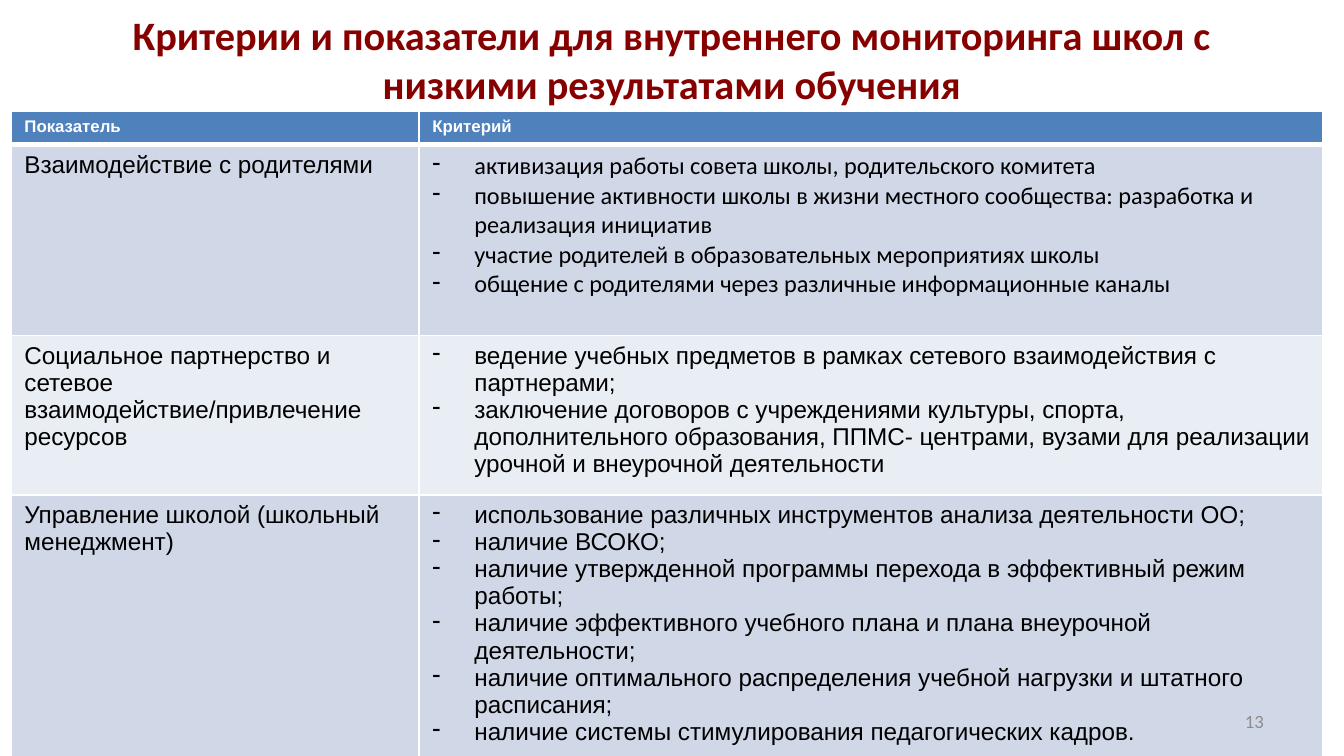
import pptx
import pptx.util
import pptx.dml.color
import pptx.enum.text
import pptx.oxml
import pptx.oxml.ns
import lxml.etree

PX = 914400 / 134.4
INK = {"title": "860000", "head": "4F81BD", "dark": "D0D8E8", "pale": "E9EDF4",
       "white": "FFFFFF", "text": "000000", "page": "8C8C8C"}
ALIGN = pptx.enum.text.PP_ALIGN
ROWS = [
    ("Взаимодействие с родителями", "Calibri", 191, [
        "активизация работы совета школы, родительского комитета",
        "повышение активности школы в жизни местного сообщества: разработка и реализация инициатив",
        "участие родителей в образовательных мероприятиях школы",
        "общение с родителями через различные информационные каналы"]),
    ("Социальное партнерство и сетевое взаимодействие/привлечение ресурсов", "Arial", 149, [
        "ведение учебных предметов в рамках сетевого взаимодействия с партнерами;",
        "заключение договоров с учреждениями культуры, спорта, дополнительного образования, "
        "ППМС- центрами, вузами для реализации урочной и внеурочной деятельности"]),
    ("Управление школой (школьный менеджмент)", "Arial", 257, [
        "использование различных инструментов анализа деятельности ОО;",
        "наличие ВСОКО;",
        "наличие утвержденной программы перехода в эффективный режим работы;",
        "наличие эффективного учебного плана и плана внеурочной деятельности;",
        "наличие оптимального распределения учебной нагрузки и штатного расписания;",
        "наличие системы стимулирования педагогических кадров."]),
]


def emu(px):
    """Turn px into EMU."""
    return pptx.util.Emu(round(px * PX))


def rgb(key):
    """Look up a colour by its key."""
    return pptx.dml.color.RGBColor.from_string(INK[key])


def style(frame, size, face, ink, bold=False):
    """Format every run of a text frame."""
    for para in frame.paragraphs:
        for run in para.runs:
            run.font.size = pptx.util.Pt(size)
            run.font.name = face
            run.font.bold = bold
            run.font.color.rgb = rgb(ink)


def label(slide, box, text, align, size, ink, bold=False):
    """Place one line of Calibri text, centred vertically, in the box."""
    shape = slide.shapes.add_textbox(*map(emu, box))
    frame = shape.text_frame
    frame.word_wrap = True
    frame.vertical_anchor = pptx.enum.text.MSO_ANCHOR.MIDDLE
    frame.margin_top = frame.margin_bottom = emu(6)
    frame.text = text
    frame.paragraphs[0].alignment = align
    style(frame, size, "Calibri", ink, bold)


def dashes(frame):
    """Give each paragraph a hanging dash."""
    for para in frame.paragraphs:
        props = para._p.get_or_add_pPr()
        props.set("marL", str(emu(42)))
        props.set("indent", str(-emu(42)))
        mark = lxml.etree.SubElement(props, pptx.oxml.ns.qn("a:buChar"))
        mark.set("char", "-")


def edges(cell, low, high):
    """Draw white cell borders with the given top and bottom widths."""
    props = cell._tc.get_or_add_tcPr()
    widths = {"lnL": 1, "lnR": 1, "lnT": high, "lnB": low}
    for spot, (tag, width) in enumerate(widths.items()):
        line = pptx.oxml.parse_xml(
            f'<a:{tag} {pptx.oxml.ns.nsdecls("a")} w="{pptx.util.Pt(width)}">'
            f'<a:solidFill><a:srgbClr val="{INK["white"]}"/></a:solidFill></a:{tag}>')
        props.insert(spot, line)


def paint(cell, text, fill, size, face, ink, bold=False, low=1, high=1):
    """Fill one cell with text, colour and borders."""
    cell.text_frame.text = text
    style(cell.text_frame, size, face, ink, bold)
    cell.fill.solid()
    cell.fill.fore_color.rgb = rgb(fill)
    edges(cell, low, high)


def grid(slide, box):
    """Build the table of indicators and criteria in the box."""
    left, top, width, height = box
    table = slide.shapes.add_table(len(ROWS) + 1, 2, *map(emu, box)).table
    first = 408
    table.columns[0].width = emu(first)
    table.columns[1].width = emu(width - first)
    table.rows[0].height = emu(height - sum(row[2] for row in ROWS))
    for col, text in enumerate(("Показатель", "Критерий")):
        paint(table.cell(0, col), text, "head", 9, "Arial", "white", True, low=3)
    for num, (name, face, tall, items) in enumerate(ROWS, 1):
        fill = "dark" if num % 2 else "pale"
        high = 3 if num == 1 else 1
        table.rows[num].height = emu(tall)
        paint(table.cell(num, 0), name, fill, 13, "Arial", "text", high=high)
        cell = table.cell(num, 1)
        paint(cell, "\n".join(items), fill, 13, face, "text", high=high)
        dashes(cell.text_frame)


def main():
    """Build and save the slide."""
    deck = pptx.Presentation()
    deck.slide_width, deck.slide_height = emu(1344), emu(756)
    slide = deck.slides.add_slide(deck.slide_layouts[6])
    label(slide, (67, 7, 1210, 104),
          "Критерии и показатели для внутреннего мониторинга школ с низкими результатами обучения",
          ALIGN.CENTER, 21.6, "title", True)
    grid(slide, (11, 111, 1312, 629))
    label(slide, (964, 701, 313, 40), "13", ALIGN.RIGHT, 10, "page")
    deck.save("out.pptx")


if __name__ == "__main__":
    main()
